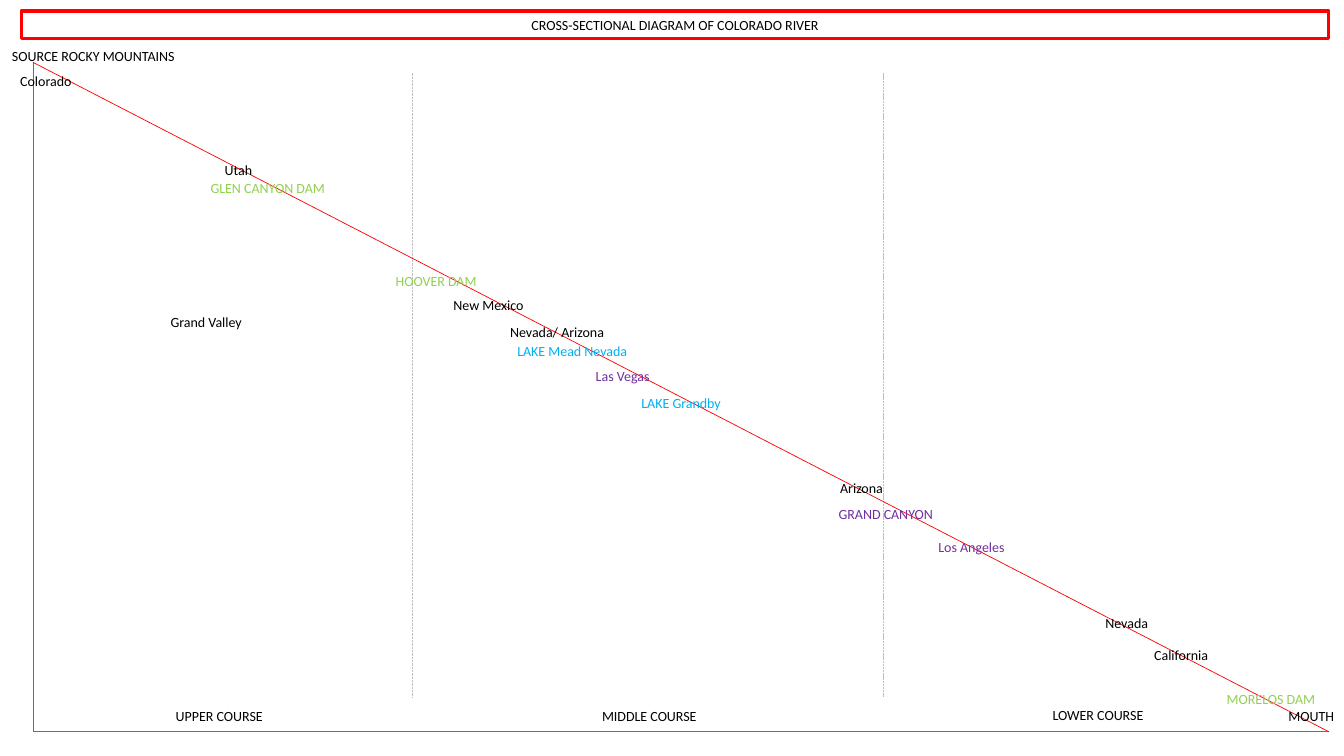
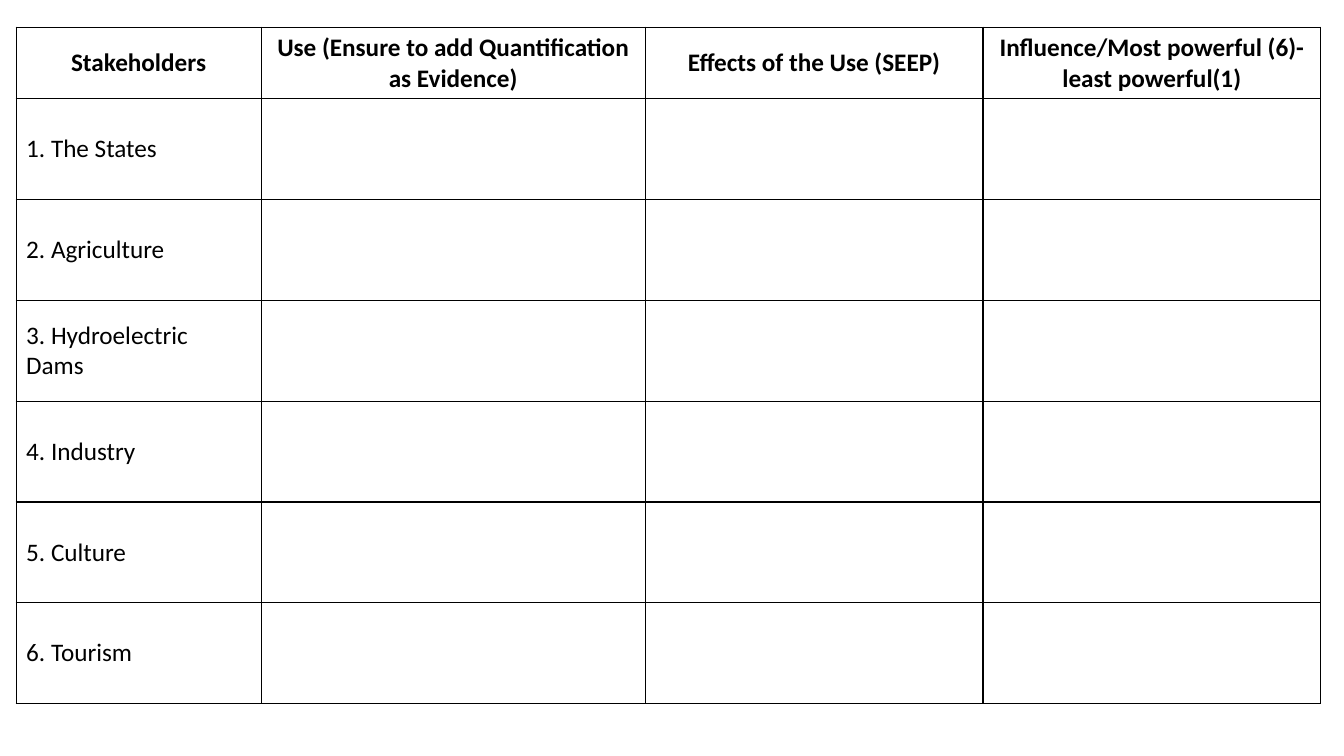
from dataclasses import dataclass

from lxml import etree
from pptx import Presentation, util as u
from pptx.dml import color as dml
from pptx.enum import dml as pen, shapes, text as txt
from pptx.oxml import ns
from pptx.slide import Slide
from pptx.table import _Cell as Cell
from pptx.text.text import TextFrame

FONT = "Calibri"
HUES = {
    "black": "000000",
    "red": "FF0000",
    "axis": "4472C4",
    "grey": "BFBFBF",
    "dam": "92D050",
    "lake": "00B0F0",
    "city": "7030A0",
}


@dataclass(frozen=True)
class Label:
    text: str
    left: float
    top: float
    hue: str = "black"
    level: int = 0
    width: float = 2.17


@dataclass(frozen=True)
class Line:
    start: tuple[float, float]
    end: tuple[float, float]
    hue: str
    dash: pen.MSO_LINE | None = None


LEFT, RIGHT, TOP, BASE = 0.33, 13.18, 0.62, 7.26
LINES = [
    Line((LEFT, TOP), (LEFT, BASE), "axis"),
    Line((RIGHT, BASE), (LEFT, BASE), "axis"),
    Line((4.09, 0.72), (4.09, 6.92), "grey", pen.MSO_LINE.ROUND_DOT),
    Line((8.76, 0.72), (8.76, 6.91), "grey", pen.MSO_LINE.SQUARE_DOT),
    Line((LEFT, TOP), (RIGHT, BASE), "red"),
]
LABELS = [
    Label("UPPER COURSE", 0.26, 6.97, width=3.83),
    Label("MIDDLE COURSE", 4.12, 6.97, width=4.64),
    Label("LOWER COURSE", 8.76, 6.96, width=4.26),
    Label("SOURCE ROCKY MOUNTAINS", -0.16, 0.42),
    Label("MOUTH", 11.92, 6.97),
    Label("HOOVER DAM", 3.24, 2.65, "dam"),
    Label("MORELOS DAM", 11.52, 6.8, "dam"),
    Label("GLEN CANYON DAM", 1.57, 1.73, "dam"),
    Label("Los Angeles", 8.55, 5.29, "city"),
    Label("Las Vegas", 5.09, 3.6, "city"),
    Label("GRAND CANYON", 7.7, 4.97, "city"),
    Label("LAKE Mead Nevada", 4.59, 3.35, "lake"),
    Label("LAKE Grandby", 5.67, 3.86, "lake"),
    Label("Colorado", -0.63, 0.67),
    Label("Utah", 1.03, 1.55, level=1),
    Label("Arizona", 7.21, 4.71, level=1),
    Label("Nevada/ Arizona", 4.19, 3.16, level=1),
    Label("New Mexico", 3.51, 2.89, level=1),
    Label("California", 10.38, 6.36, level=1),
    Label("Grand Valley", 0.71, 3.06, level=1),
    Label("Nevada", 9.84, 6.05, level=1),
]
HEADS = [
    "Stakeholders",
    "Use (Ensure to add Quantification as Evidence)",
    "Effects of the Use (SEEP)",
    "Influence/Most powerful (6)-least powerful(1)",
]
GROUPS = ["The States", "Agriculture", "Hydroelectric Dams", "Industry", "Culture", "Tourism"]
WIDTHS = [2.43, 3.81, 3.35, 3.35]
HIGHS = [0.71] + [1.0] * len(GROUPS)


def tint(hue: str) -> dml.RGBColor:
    return dml.RGBColor.from_string(HUES[hue])


def write(frame: TextFrame, text: str, *, size: float = 10, hue: str = "black",
          bold: bool = False, level: int = 0,
          align: txt.PP_ALIGN = txt.PP_ALIGN.CENTER) -> None:
    frame.word_wrap = True
    para = frame.paragraphs[0]
    para.alignment = align
    para.level = level
    run = para.add_run()
    run.text = text
    run.font.name = FONT
    run.font.size = u.Pt(size)
    run.font.bold = bold
    run.font.color.rgb = tint(hue)


def draw_line(slide: Slide, line: Line) -> None:
    ends = [u.Inches(n) for n in (*line.start, *line.end)]
    link = slide.shapes.add_connector(shapes.MSO_CONNECTOR.STRAIGHT, *ends)
    link.line.color.rgb = tint(line.hue)
    link.line.width = u.Pt(0.5)
    if line.dash is not None:
        link.line.dash_style = line.dash
    etree.SubElement(link._element.spPr, ns.qn("a:effectLst"))


def draw_label(slide: Slide, label: Label) -> None:
    box = slide.shapes.add_textbox(u.Inches(label.left), u.Inches(label.top),
                                   u.Inches(label.width), u.Inches(0.27))
    write(box.text_frame, label.text, hue=label.hue, level=label.level)
    box.text_frame.auto_size = txt.MSO_AUTO_SIZE.SHAPE_TO_FIT_TEXT


def draw_title(slide: Slide, text: str) -> None:
    box = slide.shapes.add_shape(shapes.MSO_SHAPE.RECTANGLE, u.Inches(0.21),
                                 u.Inches(0.11), u.Inches(12.97), u.Inches(0.27))
    box.shadow.inherit = False
    box.fill.background()
    box.line.color.rgb = tint("red")
    box.line.width = u.Pt(2.25)
    write(box.text_frame, text)
    box.text_frame.auto_size = txt.MSO_AUTO_SIZE.SHAPE_TO_FIT_TEXT


def frame_cell(cell: Cell) -> None:
    props = cell._tc.get_or_add_tcPr()
    for side in ("lnL", "lnR", "lnT", "lnB"):
        edge = etree.SubElement(props, ns.qn(f"a:{side}"), w=str(u.Pt(1)))
        fill = etree.SubElement(edge, ns.qn("a:solidFill"))
        etree.SubElement(fill, ns.qn("a:srgbClr"), val=HUES["black"])
    cell.fill.background()
    cell.vertical_anchor = txt.MSO_ANCHOR.MIDDLE


def draw_table(slide: Slide) -> None:
    grid = slide.shapes.add_table(len(HIGHS), len(WIDTHS), u.Inches(0.16), u.Inches(0.27),
                                  u.Inches(sum(WIDTHS)), u.Inches(sum(HIGHS))).table
    grid.first_row = grid.horz_banding = False
    for col, width in zip(grid.columns, WIDTHS):
        col.width = u.Inches(width)
    for row, high in zip(grid.rows, HIGHS):
        row.height = u.Inches(high)
    for cell in grid.iter_cells():
        frame_cell(cell)
    for col, head in enumerate(HEADS):
        write(grid.cell(0, col).text_frame, head, size=18, bold=True)
    for row, group in enumerate(GROUPS, 1):
        write(grid.cell(row, 0).text_frame, f"{row}. {group}", size=18,
              align=txt.PP_ALIGN.LEFT)


def main() -> None:
    deck = Presentation()
    deck.slide_width, deck.slide_height = u.Inches(13.33), u.Inches(7.5)
    blank = deck.slide_layouts[6]
    river = deck.slides.add_slide(blank)
    for line in LINES:
        draw_line(river, line)
    draw_title(river, "CROSS-SECTIONAL DIAGRAM OF COLORADO RIVER")
    for label in LABELS:
        draw_label(river, label)
    draw_table(deck.slides.add_slide(blank))
    deck.save("out.pptx")


if __name__ == "__main__":
    main()
